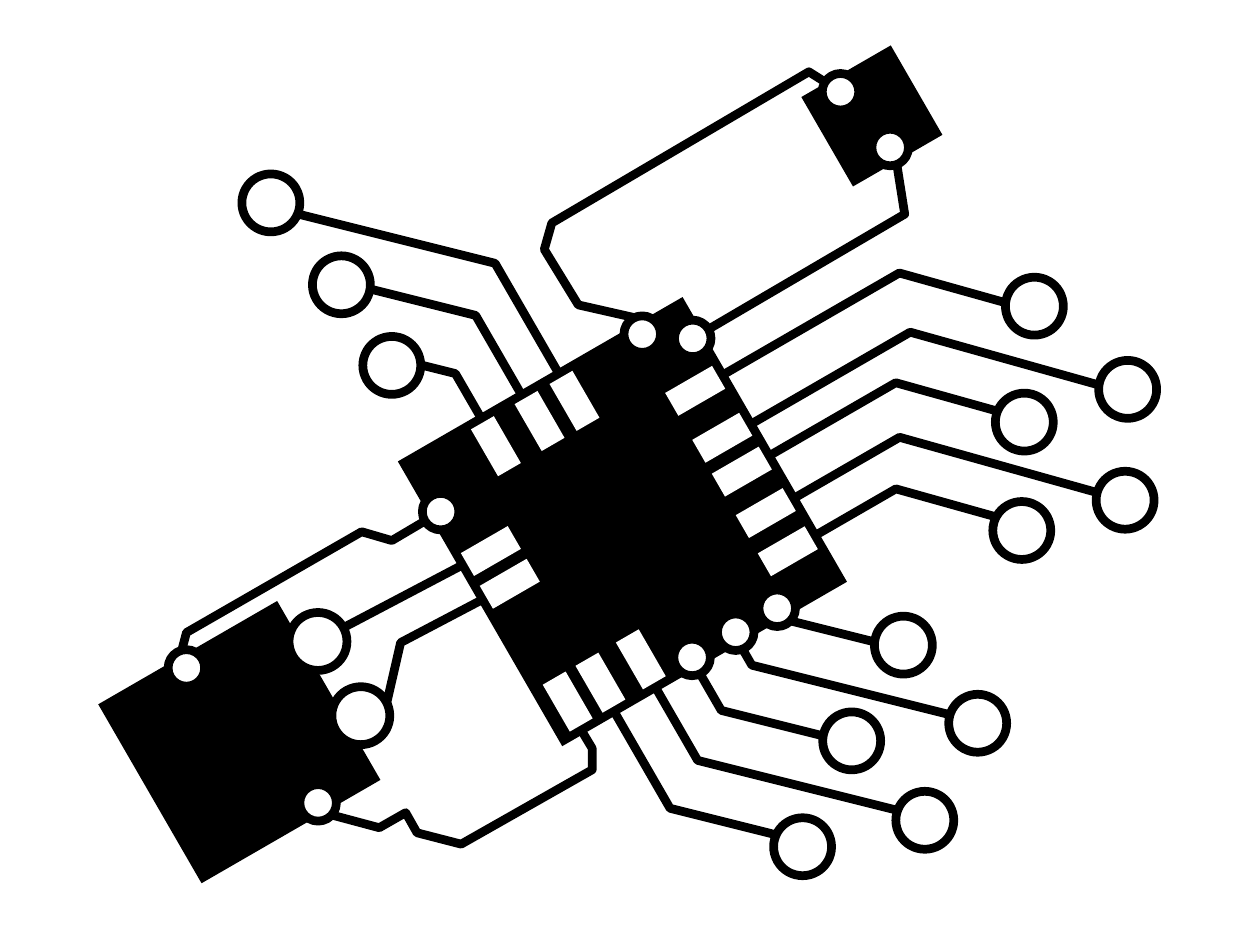
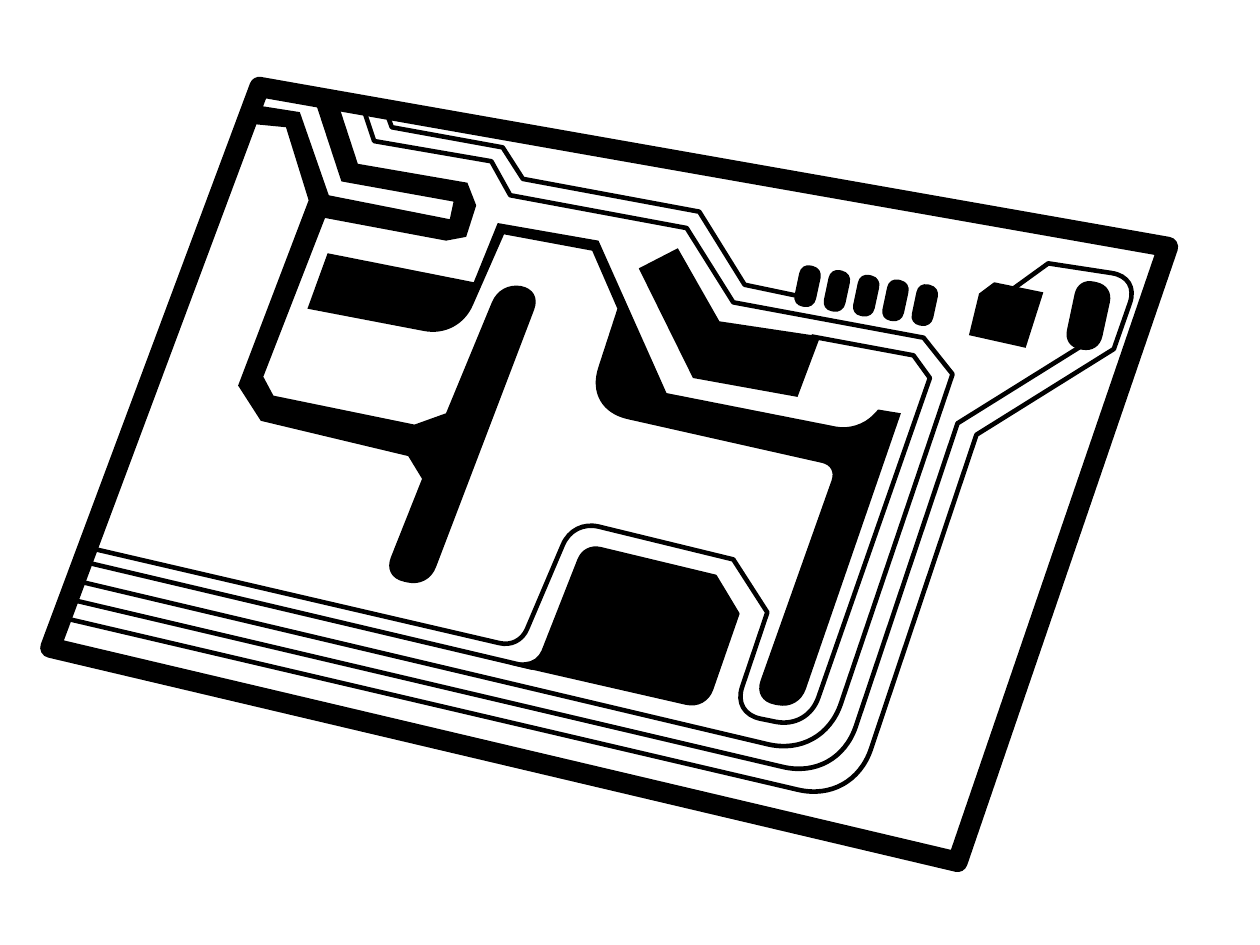
from dataclasses import dataclass
from itertools import islice
from math import cos, dist, radians, sin

from pptx import Presentation
from pptx.dml.color import RGBColor
from pptx.enum.shapes import MSO_SHAPE
from pptx.oxml.ns import qn
from pptx.oxml.xmlchemy import OxmlElement
from pptx.util import Inches, Pt


@dataclass(frozen=True)
class Theme:
    """Colours and stroke widths in points shared by both circuits."""
    ink: RGBColor = RGBColor(0, 0, 0)
    paper: RGBColor = RGBColor(255, 255, 255)
    chip_trace: float = 5
    board_trace: float = 2.63
    board_edge: float = 11.63
    plane_edge: float = 1.38


@dataclass(frozen=True)
class Box:
    """Region of a slide, in inches."""
    left: float
    top: float
    width: float
    height: float


@dataclass(frozen=True)
class Package:
    """Tilted square component that locates points by side, lane and depth."""
    x: float
    y: float
    side: float

    def spot(self, side, lane, depth):
        """Find the point a depth out from the centre, a lane along a side."""
        along, across = {"right": (depth, lane), "left": (-depth, lane),
                         "top": (lane, -depth), "bottom": (lane, depth)}[side]
        turn = radians(TILT)
        return (self.x + along * cos(turn) - across * sin(turn),
                self.y + along * sin(turn) + across * cos(turn))


@dataclass(frozen=True)
class Lead:
    """Trace straight out of a lane to a reach, then aslant to a pad."""
    lane: float
    reach: float
    pad: tuple


THEME = Theme()
PAGE = Box(0, 0, 10, 7.5)
TILT = -30
PAD_SIZE, VIA_SIZE = 0.46, 0.29
SLOT_LENGTH, SLOT_WIDTH = 0.43, 0.21
PAD_LANDING = 0.22
SLOT_DEPTH, VIA_DEPTH = 1.02, 1.21
ROUNDNESS = 0.6

CHIP = Package(4.94, 4.14, 2.61)
SENSOR = Package(6.92, 0.92, 0.82)
BATTERY = Package(1.9, 5.89, 1.64)

SLOT_LANES = {
    "right": [-0.61, -0.18, 0.13, 0.51, 0.86],
    "left": [-0.32, -0.02],
    "top": [0.15, -0.17, -0.57],
    "bottom": [-0.42, -0.79, -1.09],
}
VIA_LANES = {"right": [-0.98], "left": [-0.79], "top": [0.88],
             "bottom": [-0.06, 0.34, 0.72]}

LEADS = {
    "right": [Lead(-0.61, 2.89, (8.21, 2.43)), Lead(-0.16, 2.73, (8.95, 3.09)),
              Lead(0.13, 2.43, (8.13, 3.35)), Lead(0.52, 2.24, (8.93, 3.97)),
              Lead(0.86, 2.01, (8.11, 4.21))],
    "bottom": [Lead(-0.81, 2.16, (6.37, 6.72)), Lead(-0.43, 1.94, (7.34, 6.51)),
               Lead(-0.07, 1.69, (6.76, 5.88)), Lead(0.32, 1.5, (7.76, 5.74)),
               Lead(0.72, 1.31, (7.17, 5.12))],
    "top": [Lead(0.15, 2.28, (2.15, 1.61)), Lead(-0.19, 2, (2.71, 2.26)),
            Lead(-0.56, 1.68, (3.11, 2.9))],
}
TAIL_SLOPES = {"right": 0.28, "bottom": 0.25, "top": 0.25}


def rounded(corners):
    """Turn (x, y) or (x, y, trim) corners into straight and curved segments."""
    segments = []
    for i, (x, y, *trim) in enumerate(corners):
        if not trim:
            segments.append((x, y))
            continue
        neighbours = corners[i - 1][:2], corners[(i + 1) % len(corners)][:2]
        ends, handles = [], []
        for near in neighbours:
            share = trim[0] / dist((x, y), near)
            pull = (near[0] - x) * share, (near[1] - y) * share
            ends.append((x + pull[0], y + pull[1]))
            handles.append((x + pull[0] * (1 - ROUNDNESS),
                            y + pull[1] * (1 - ROUNDNESS)))
        segments += [ends[0], (*handles[0], *handles[1], *ends[1])]
    return segments


def bend_curves(shape, segments):
    """Replace the three legs that stand for each curve by one curve."""
    strokes = iter(shape.element.findall(".//" + qn("a:lnTo")))
    for segment in segments:
        legs = list(islice(strokes, len(segment) // 2))
        if len(legs) == 3:
            curve = OxmlElement("a:cubicBezTo")
            legs[0].addprevious(curve)
            for leg in legs:
                curve.append(leg[0])
                leg.getparent().remove(leg)


def paint(shape, fill, stroke):
    """Apply a flat fill and an ink stroke, either of which may be absent."""
    shape.shadow.inherit = False
    if fill is None:
        shape.fill.background()
    else:
        shape.fill.solid()
        shape.fill.fore_color.rgb = fill
    if stroke:
        shape.line.color.rgb = THEME.ink
        shape.line.width = Pt(stroke)
    else:
        shape.line.fill.background()


def add_outline(slide, box, corners, fill=None, stroke=None, closed=False):
    """Draw a trace or an area through corners, rounding those with a trim."""
    segments = rounded(corners)
    points = [(Inches(box.left + x), Inches(box.top + y))
              for segment in segments
              for x, y in zip(segment[::2], segment[1::2])]
    builder = slide.shapes.build_freeform(*points[0], scale=1.0)
    builder.add_line_segments(points[1:], close=closed)
    shape = builder.convert_to_shape()
    bend_curves(shape, segments[1:])
    paint(shape, fill, stroke)


def add_centred(slide, box, kind, centre, size, fill, stroke=None):
    """Add a tilted preset shape around a centre relative to the box."""
    (x, y), (width, height) = centre, size
    shape = slide.shapes.add_shape(
        kind, Inches(box.left + x - width / 2), Inches(box.top + y - height / 2),
        Inches(width), Inches(height))
    shape.rotation = TILT
    paint(shape, fill, stroke)


def add_ring(slide, box, centre, size):
    """Add a round pad or via."""
    add_centred(slide, box, MSO_SHAPE.OVAL, centre, (size, size),
                THEME.paper, THEME.chip_trace)


def draw_packages(slide, box):
    """Draw the chip, the sensor and the battery as tilted squares."""
    for package in (CHIP, SENSOR, BATTERY):
        add_centred(slide, box, MSO_SHAPE.RECTANGLE, (package.x, package.y),
                    (package.side, package.side), THEME.ink)


def draw_links(slide, box):
    """Wire the sensor and the battery to the chip."""
    links = {
        "sensor to chip top": [
            SENSOR.spot("top", -0.12, 0.29), (6.42, 0.57), (4.38, 1.77),
            (4.32, 1.98), (4.59, 2.42), (5.03, 2.52), (5.1, 2.64)],
        "sensor to chip right": [
            CHIP.spot("right", -0.98, VIA_DEPTH), (7.18, 1.7), (7.09, 1.13)],
        "battery to chip left": [
            CHIP.spot("left", -0.79, VIA_DEPTH), (3.11, 4.29), (2.87, 4.22),
            (1.48, 5.02), (1.44, 5.17), (1.46, 5.24)],
        "battery to chip bottom": [
            (2.45, 6.42), (3.01, 6.57), (3.22, 6.45), (3.31, 6.61),
            (3.66, 6.7), (4.7, 6.11), (4.7, 5.94), (4.46, 5.54)],
        "upper battery pad": [(3.66, 4.49), (2.71, 4.99)],
        "lower battery pad": [(3.94, 4.7), (3.18, 5.1), (3.06, 5.62)],
    }
    for link in links.values():
        add_outline(slide, box, link, stroke=THEME.chip_trace)


def draw_leads(slide, box):
    """Run each lead square out of the chip, then at its side's slope to a pad."""
    for side, leads in LEADS.items():
        for lead in leads:
            elbow = CHIP.spot(side, lead.lane, lead.reach)
            inward = -1 if lead.pad[0] > elbow[0] else 1
            rim = lead.pad[0] + inward * PAD_LANDING
            landing = rim, elbow[1] + TAIL_SLOPES[side] * (rim - elbow[0])
            start = CHIP.spot(side, lead.lane, SLOT_DEPTH)
            add_outline(slide, box, [start, elbow, landing],
                        stroke=THEME.chip_trace)
            add_ring(slide, box, lead.pad, PAD_SIZE)


def draw_contacts(slide, box):
    """Cut slots along the chip's sides and set vias and battery pads."""
    for side, lanes in SLOT_LANES.items():
        size = SLOT_WIDTH, SLOT_LENGTH
        if side in ("left", "right"):
            size = SLOT_LENGTH, SLOT_WIDTH
        for lane in lanes:
            add_centred(slide, box, MSO_SHAPE.RECTANGLE,
                        CHIP.spot(side, lane, SLOT_DEPTH), size, THEME.paper)
    for lane in (-0.38, 0.3):
        add_ring(slide, box, BATTERY.spot("right", lane, 0.94), PAD_SIZE)
    vias = [CHIP.spot(side, lane, VIA_DEPTH)
            for side, lanes in VIA_LANES.items() for lane in lanes]
    vias += [SENSOR.spot("top", -0.12, 0.29), SENSOR.spot("bottom", 0, 0.29),
             BATTERY.spot("top", -0.07, 0.72), BATTERY.spot("bottom", 0.3, 0.73)]
    for via in vias:
        add_ring(slide, box, via, VIA_SIZE)


def draw_chip(slide, box):
    """Draw the chip circuit from the back layer to the front."""
    for layer in (draw_packages, draw_links, draw_leads, draw_contacts):
        layer(slide, box)


def draw_bus(slide, box):
    """Draw three nested lanes, evenly stepped, that differ in their heads."""
    heads = [
        [(7.56, 2.97), (7.33, 2.68), (5.82, 2.4), (5.45, 1.81), (4.05, 1.55),
         (3.9, 1.28), (2.97, 1.12), (2.88, 0.85)],
        [(7.6, 3.36), (8.61, 2.73)],
        [(7.75, 3.45), (8.84, 2.77), (9.04, 2.2, 0.22), (8.32, 2.09),
         (8.03, 2.3)],
    ]
    for i, head in enumerate(heads):
        edge = 0.61 - 0.04 * i, 4.61 + 0.15 * i
        turn = 6.53 + 0.12 * i, 6.01 + 0.18 * i, 0.45
        add_outline(slide, box, [edge, turn, *head], stroke=THEME.board_trace)


def draw_traces(slide, box):
    """Draw the single traces beside the bus."""
    traces = {
        "around the plane": [
            (0.76, 4.36), (4.12, 5.14, 0.16), (4.55, 4.13, 0.21),
            (5.82, 4.44), (6.09, 4.86), (5.82, 5.66, 0.22),
            (6.41, 5.78, 0.26), (7.38, 3), (7.25, 2.82), (6.44, 2.67)],
        "into the plane": [(0.67, 4.46), (4.23, 5.3)],
        "to the contacts": [
            (3.07, 0.9), (3.11, 1.01), (3.99, 1.17), (4.15, 1.42),
            (5.55, 1.68), (5.91, 2.26), (6.34, 2.35)],
    }
    for trace in traces.values():
        add_outline(slide, box, trace, stroke=THEME.board_trace)


def draw_copper(slide, box):
    """Fill the copper areas and the ground plane."""
    areas = {
        "elbow": [(5.38, 1.97), (5.71, 2.55), (6.51, 2.67), (6.33, 3.15),
                  (5.5, 3), (5.07, 2.13)],
        "power rail": [
            (2.44, 2.45), (3.64, 2.68, 0.28), (4, 1.86), (4.7, 1.99),
            (4.9, 2.45), (4.64, 3.25, 0.35), (6.64, 3.7, 0.12),
            (5.98, 5.56, 0.17), (6.34, 5.63, 0.17), (7.15, 3.28),
            (6.97, 3.25), (6.81, 3.42, 0.18), (5.29, 3.12), (4.75, 1.91),
            (3.95, 1.77), (3.76, 2.24), (2.6, 2.01)],
        "crystal": [(8.28, 2.32), (8.14, 2.76), (7.69, 2.66), (7.77, 2.33),
                    (7.89, 2.24)],
        "antenna": [
            (3.54, 3.28), (3.29, 3.37), (2.17, 3.14), (2.09, 2.99),
            (2.58, 1.73), (3.54, 1.91), (3.7, 1.88), (3.78, 1.63),
            (3.71, 1.45), (2.84, 1.3), (2.68, 0.81), (2.49, 0.77),
            (2.71, 1.44), (3.6, 1.6), (3.57, 1.74), (2.61, 1.55),
            (2.38, 0.89), (2, 0.83), (1.96, 0.98), (2.27, 1.01),
            (2.45, 1.59), (1.89, 3.06), (2.07, 3.34), (3.24, 3.62),
            (3.35, 3.8), (3.04, 4.58, 0.17), (3.4, 4.66, 0.17),
            (4.3, 2.3, 0.17), (3.97, 2.24, 0.17)],
    }
    for area in areas.values():
        add_outline(slide, box, area, THEME.ink, closed=True)
    plane = [(4.07, 5.27), (4.27, 5.26, 0.1), (4.64, 4.32, 0.13),
             (5.68, 4.57), (5.86, 4.87), (5.6, 5.62, 0.16)]
    add_outline(slide, box, plane, THEME.ink, THEME.plane_edge, closed=True)


def draw_capsules(slide, box):
    """Draw a row of five evenly spaced capsules and one larger capsule."""
    corners = [(-0.16, -0.1), (0.01, -0.06), (-0.06, 0.26), (-0.23, 0.23)]
    row = [(6.52 + 0.93 * i / 4, 2.19 + 0.15 * i / 4, 1) for i in range(5)]
    for x, y, scale in [*row, (8.82, 2.37, 1.65)]:
        capsule = [(x + scale * dx, y + scale * dy, scale * 0.08)
                   for dx, dy in corners]
        add_outline(slide, box, capsule, THEME.ink, closed=True)


def draw_board(slide, box):
    """Draw the slanted board from its edge to its contacts."""
    edge = [(7.6, 6.84), (0.4, 5.14), (2.06, 0.69), (9.27, 1.96)]
    add_outline(slide, box, edge, stroke=THEME.board_edge, closed=True)
    for layer in (draw_bus, draw_traces, draw_copper, draw_capsules):
        layer(slide, box)


def main():
    """Build both slides and save the presentation."""
    deck = Presentation()
    deck.slide_width = Inches(PAGE.width)
    deck.slide_height = Inches(PAGE.height)
    for draw in (draw_chip, draw_board):
        draw(deck.slides.add_slide(deck.slide_layouts[6]), PAGE)
    deck.save("out.pptx")


if __name__ == "__main__":
    main()
